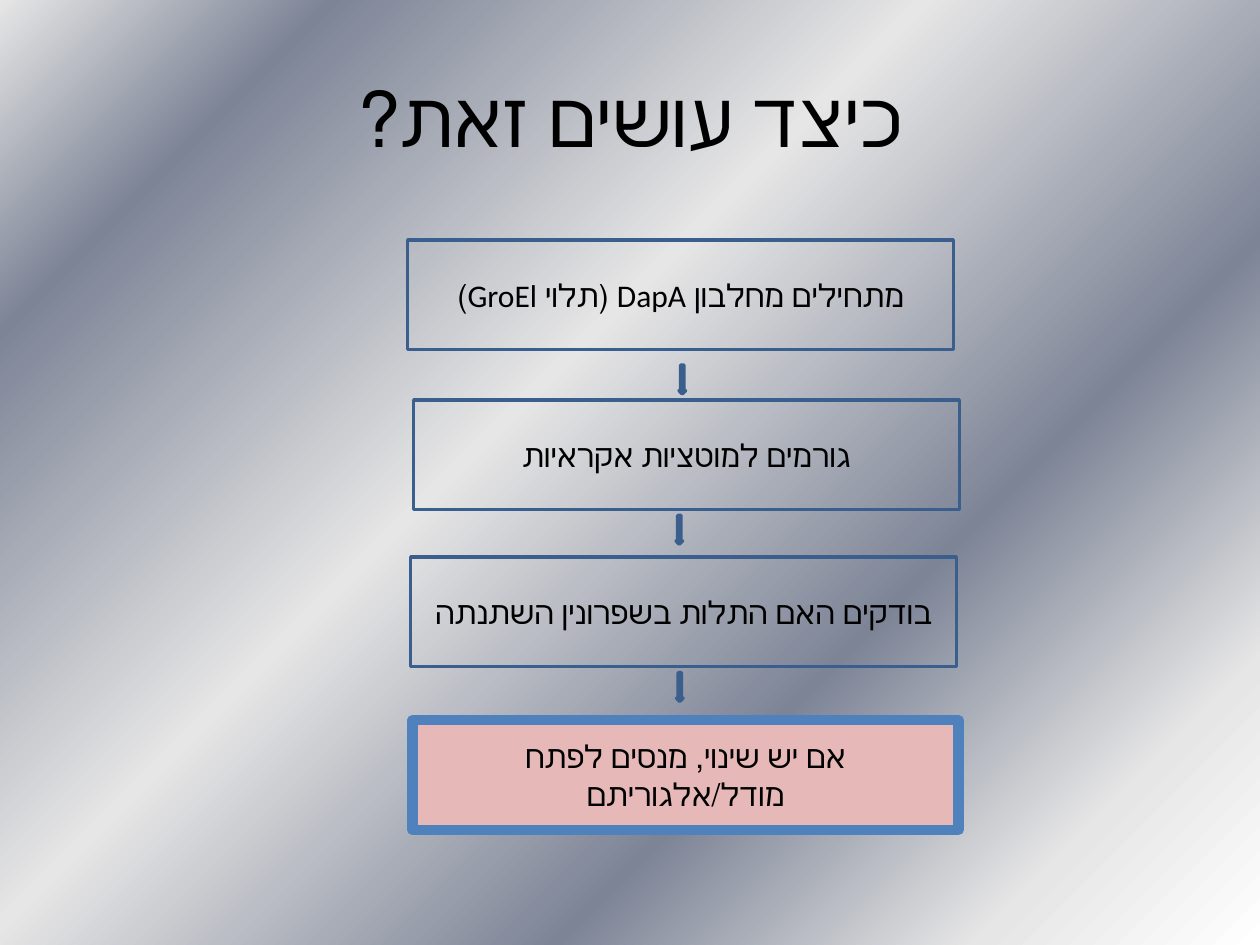
from lxml.etree import SubElement
from pptx import Presentation
from pptx.dml.color import RGBColor
from pptx.enum.shapes import MSO_SHAPE
from pptx.enum.text import MSO_ANCHOR, PP_ALIGN
from pptx.oxml.ns import qn
from pptx.util import Cm, Pt

BLACK = RGBColor(0x00, 0x00, 0x00)
BLUE = RGBColor(0x4F, 0x81, 0xBD)
DARK_BLUE = RGBColor(0x3A, 0x5F, 0x8C)
PINK = RGBColor(0xE6, 0xB9, 0xB8)
WHITE = RGBColor(0xFF, 0xFF, 0xFF)
SILVER = RGBColor(0xE6, 0xE6, 0xE6)
SLATE = RGBColor(0x7D, 0x84, 0x96)
FONT = "Calibri"


def write_hebrew(shape, text, size):
    frame = shape.text_frame
    frame.word_wrap = True
    frame.vertical_anchor = MSO_ANCHOR.MIDDLE
    paragraph = frame.paragraphs[0]
    paragraph.alignment = PP_ALIGN.CENTER
    paragraph._p.get_or_add_pPr().set("rtl", "1")
    run = paragraph.add_run()
    run.text = text
    run.font.size = Pt(size)
    run.font.name = FONT
    run.font.color.rgb = BLACK


def add_outlined(kind, left, top, width, height, fill, line, line_width):
    shape = slide.shapes.add_shape(kind, Cm(left), Cm(top), Cm(width), Cm(height))
    shape.shadow.inherit = False
    if fill is None:
        shape.fill.background()
    else:
        shape.fill.solid()
        shape.fill.fore_color.rgb = fill
    shape.line.color.rgb = line
    shape.line.width = Pt(line_width)
    return shape


presentation = Presentation()
presentation.slide_width = Cm(25.4)
presentation.slide_height = Cm(19.05)
slide = presentation.slides.add_slide(presentation.slide_layouts[6])

background = slide.background.fill
background.gradient()
background.gradient_angle = 135
stops = next(slide.element.iter(qn("a:gsLst")))
for stop in list(stops):
    stops.remove(stop)
for percent, color in [(0, WHITE), (13, SILVER), (32, SLATE),
                       (58, SILVER), (85, SLATE), (100, SILVER)]:
    stop = SubElement(stops, qn("a:gs"), pos=str(percent * 1000))
    SubElement(stop, qn("a:srgbClr"), val=str(color))

title = slide.shapes.add_textbox(Cm(1.27), Cm(0.76), Cm(22.86), Cm(3.18))
write_hebrew(title, "כיצד עושים זאת?", 44)

steps = [
    ("מתחילים מחלבון DapA (תלוי GroEl)", 8.22, 4.84, None, DARK_BLUE, 2),
    ("גורמים למוטציות אקראיות", 8.34, 8.06, None, DARK_BLUE, 2),
    ("בודקים האם התלות בשפרונין השתנתה", 8.28, 11.23, None, DARK_BLUE, 2),
    ("אם יש שינוי, מנסים לפתח מודל/אלגוריתם", 8.32, 14.52, PINK, BLUE, 6),
]
for text, left, top, fill, line, line_width in steps:
    box = add_outlined(MSO_SHAPE.RECTANGLE, left, top, 11, 2.21, fill, line, line_width)
    write_hebrew(box, text, 18)

for left, top in [(13.69, 7.36), (13.63, 10.39), (13.64, 13.56)]:
    add_outlined(MSO_SHAPE.DOWN_ARROW, left, top, 0.13, 0.58, BLUE, DARK_BLUE, 2)

presentation.save("out.pptx")
